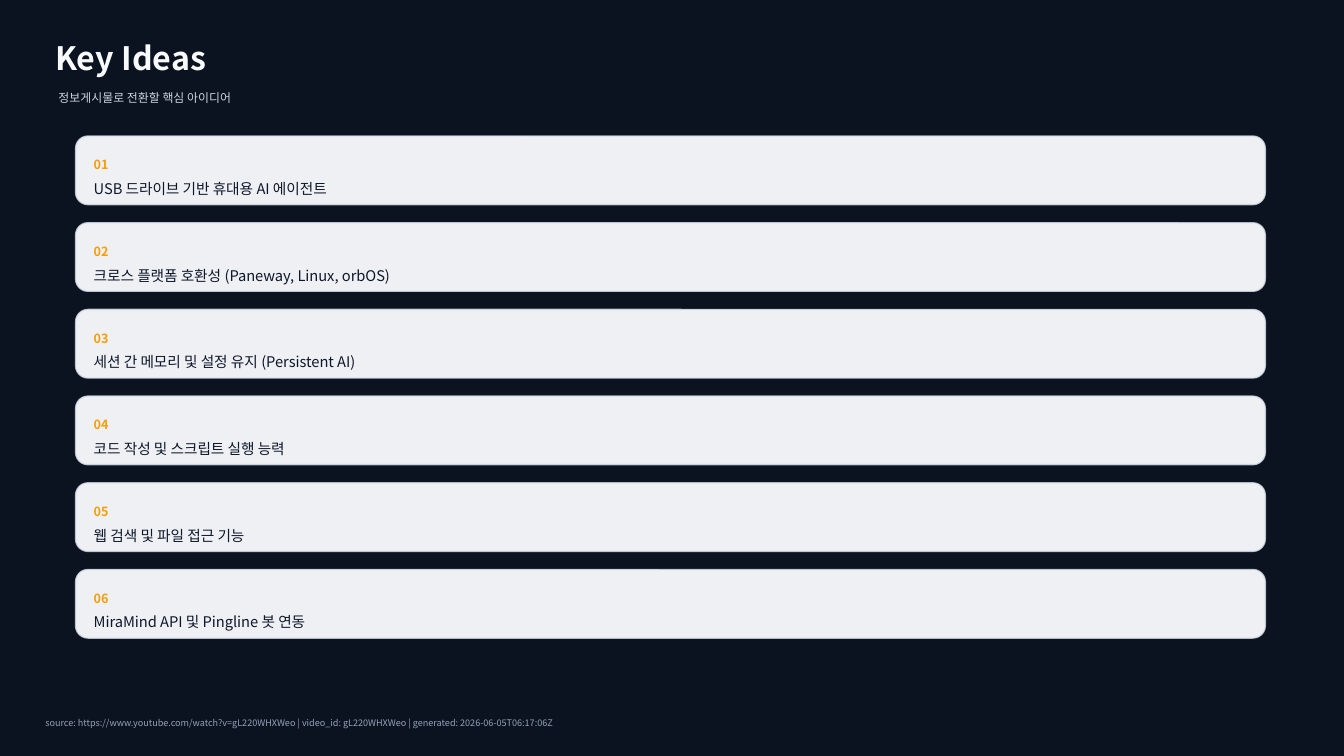
import lxml.etree
import pptx
import pptx.dml.color
import pptx.enum.shapes
import pptx.enum.text
import pptx.oxml.ns
import pptx.util

Inches = pptx.util.Inches
RGBColor = pptx.dml.color.RGBColor

NAVY = RGBColor(0x0B, 0x12, 0x20)
WHITE = RGBColor(0xF8, 0xFA, 0xFC)
SILVER = RGBColor(0xCB, 0xD5, 0xE1)
BORDER = RGBColor(0xD7, 0xE0, 0xEA)
AMBER = RGBColor(0xF5, 0x9E, 0x0B)
INK = RGBColor(0x0F, 0x17, 0x2A)
SLATE = RGBColor(0x94, 0xA3, 0xB8)

IDEAS = [
    "USB 드라이브 기반 휴대용 AI 에이전트",
    "크로스 플랫폼 호환성 (Paneway, Linux, orbOS)",
    "세션 간 메모리 및 설정 유지 (Persistent AI)",
    "코드 작성 및 스크립트 실행 능력",
    "웹 검색 및 파일 접근 기능",
    "MiraMind API 및 Pingline 봇 연동",
]
SOURCE = (
    "source: https://www.youtube.com/watch?v=gL220WHXWeo"
    " | video_id: gL220WHXWeo | generated: 2026-06-05T06:17:06Z"
)
FIRST_CARD_TOP = 1.35
CARD_PITCH = 0.86


class IdeaSlide:
    """Draws text and cards on one slide in a shared style."""

    font_name = "Noto Sans CJK KR"

    def __init__(self, slide):
        self.slide = slide
        slide.background.fill.solid()
        slide.background.fill.fore_color.rgb = NAVY

    def text(self, words, left, top, width, height, size, color, bold=False):
        box = self.slide.shapes.add_textbox(
            Inches(left), Inches(top), Inches(width), Inches(height)
        )
        frame = box.text_frame
        frame.word_wrap = True
        frame.vertical_anchor = pptx.enum.text.MSO_ANCHOR.MIDDLE
        frame.margin_left = frame.margin_right = 0
        frame.margin_top = frame.margin_bottom = 0
        paragraph = frame.paragraphs[0]
        paragraph.text = words
        font = paragraph.font
        font.name = self.font_name
        font.size = pptx.util.Pt(size)
        font.bold = bold
        font.color.rgb = color
        latin = paragraph._p.find(".//" + pptx.oxml.ns.qn("a:latin"))
        east_asian = lxml.etree.Element(
            pptx.oxml.ns.qn("a:ea"), typeface=self.font_name
        )
        latin.addnext(east_asian)

    def panel(self, left, top, width, height):
        shape = self.slide.shapes.add_shape(
            pptx.enum.shapes.MSO_SHAPE.ROUNDED_RECTANGLE,
            Inches(left), Inches(top), Inches(width), Inches(height),
        )
        shape.adjustments[0] = 0.18
        shape.shadow.inherit = False
        shape.fill.solid()
        shape.fill.fore_color.rgb = WHITE
        shape.line.color.rgb = BORDER
        shape.line.width = pptx.util.Pt(1)
        colors = shape._element.spPr.iter(pptx.oxml.ns.qn("a:srgbClr"))
        for color, percent in zip(colors, (96, 80)):
            lxml.etree.SubElement(
                color, pptx.oxml.ns.qn("a:alpha"), val=str(percent * 1000)
            )

    def card(self, number, idea, top):
        self.panel(0.75, top, 11.8, 0.68)
        self.text(f"{number:02}", 0.93, top + 0.16, 11.44, 0.25, 9, AMBER, bold=True)
        self.text(idea, 0.93, top + 0.5, 11.44, 0.04, 10.5, INK)


def main():
    presentation = pptx.Presentation()
    presentation.slide_width = Inches(13.33)
    presentation.slide_height = Inches(7.5)
    slide = IdeaSlide(presentation.slides.add_slide(presentation.slide_layouts[6]))
    slide.text("Key Ideas", 0.55, 0.35, 12, 0.45, 23, WHITE, bold=True)
    slide.text("정보게시물로 전환할 핵심 아이디어", 0.58, 0.83, 11.5, 0.28, 8.5, SILVER)
    for index, idea in enumerate(IDEAS):
        slide.card(index + 1, idea, FIRST_CARD_TOP + index * CARD_PITCH)
    slide.text(SOURCE, 0.45, 7.05, 12.4, 0.25, 6.5, SLATE)
    presentation.save("out.pptx")


if __name__ == "__main__":
    main()
